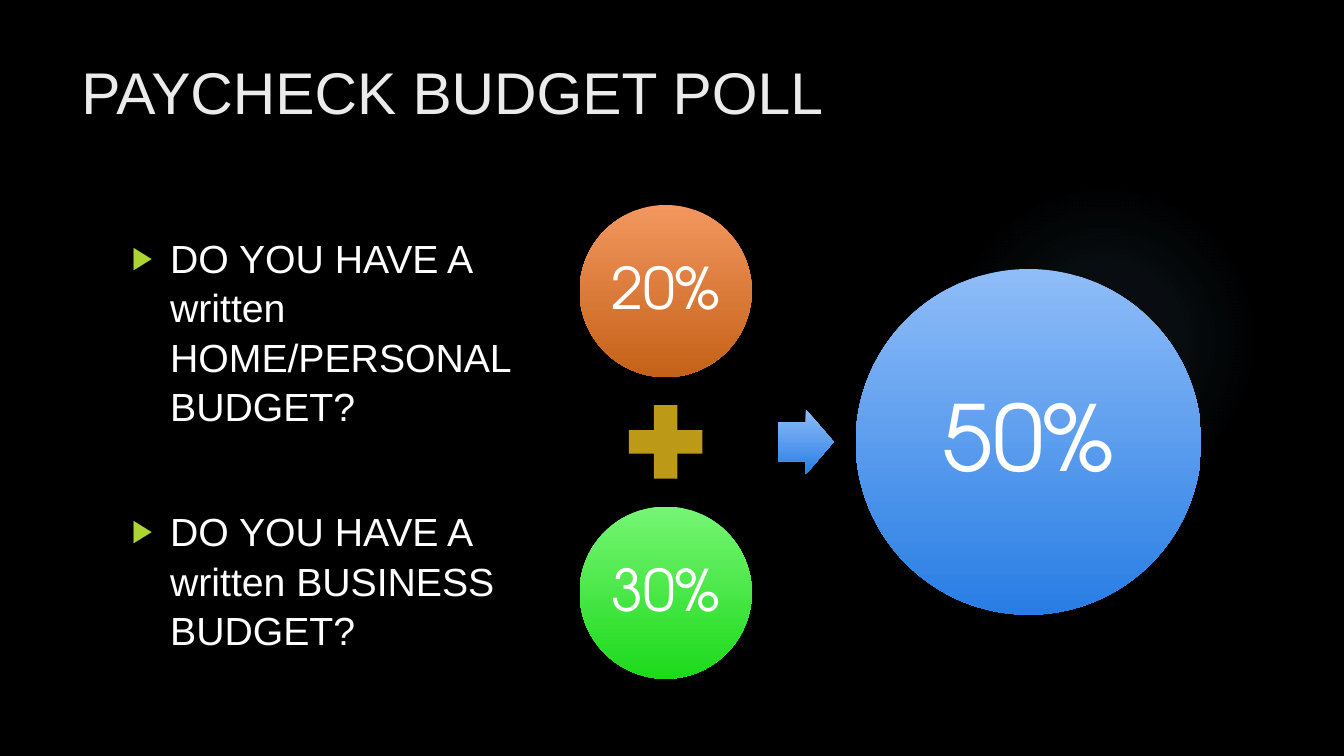
import pptx
import pptx.util
import pptx.dml.color
import pptx.enum.shapes
import pptx.enum.text
import pptx.oxml
import pptx.oxml.ns

Pt = pptx.util.Pt
Kind = pptx.enum.shapes.MSO_SHAPE
Align = pptx.enum.text.PP_ALIGN
Anchor = pptx.enum.text.MSO_ANCHOR

COLS, ROWS = 160, 90
SANS, ROUND = "Arial", "TeX Gyre Adventor"
WHITE, PALE, LIME, GOLD = "FFFFFF", "EBEBEB", "ACD433", "BC9A17"
ORANGE = ("F2975F", "C56118")
GREEN = ("76F574", "1DDA1B")
BLUE = ("8FBDF8", "287DE4")


def ink(code):
    return pptx.dml.color.RGBColor.from_string(code)


def parse(tag, attrs="", inner=""):
    """Make one DrawingML element."""
    space = pptx.oxml.ns.nsdecls("a")
    return pptx.oxml.parse_xml(f"<a:{tag} {space} {attrs}>{inner}</a:{tag}>")


class Deck:
    """Holds the style and the slide; lengths are grid cells."""

    def __init__(self):
        self.show = pptx.Presentation()
        self.show.slide_width = pptx.util.Inches(13.33)
        self.show.slide_height = pptx.util.Inches(7.5)
        self.cell = (self.show.slide_width / COLS, self.show.slide_height / ROWS)
        self.slide = self.show.slides.add_slide(self.show.slide_layouts[1])
        back = self.slide.background.fill
        back.solid()
        back.fore_color.rgb = ink("000000")

    def place(self, item, left, top, width, height):
        wide, high = self.cell
        item.left, item.width = round(left * wide), round(width * wide)
        item.top, item.height = round(top * high), round(height * high)

    def style(self, para, font, size, color):
        for run in para.runs:
            run.font.name = font
            run.font.size = Pt(size)
            run.font.color.rgb = ink(color)

    def holder(self, item, box):
        self.place(item, *box)
        frame = item.text_frame
        frame.word_wrap = True
        frame.auto_size = pptx.enum.text.MSO_AUTO_SIZE.NONE
        frame.vertical_anchor = Anchor.TOP
        return frame

    def title(self, text, box):
        frame = self.holder(self.slide.shapes.title, box)
        frame.text = text
        para = frame.paragraphs[0]
        para.alignment = Align.LEFT
        self.style(para, SANS, 42, PALE)

    def list(self, lines, box, gap):
        frame = self.holder(self.slide.placeholders[1], box)
        frame.text = "\n".join(lines)
        indent = pptx.util.Inches(0.38)
        for index, para in enumerate(frame.paragraphs):
            props = para._p.get_or_add_pPr()
            props.set("marL", str(indent))
            props.set("indent", str(-indent))
            props.append(parse("buClr", "", f'<a:srgbClr val="{LIME}"/>'))
            props.append(parse("buSzPct", 'val="80000"'))
            props.append(parse("buChar", 'char="▶"'))
            para.line_spacing = 1.05
            para.space_before = Pt(gap if index else 0)
            self.style(para, SANS, 28, WHITE)

    def shape(self, kind, mid, width, height):
        """Add a plain shape around its middle point."""
        item = self.slide.shapes.add_shape(kind, 0, 0, 0, 0)
        self.place(item, mid[0] - width / 2, mid[1] - height / 2, width, height)
        item.shadow.inherit = False
        item.line.fill.background()
        return item

    def shade(self, item, pair):
        """Fill from the first colour at the top to the second below."""
        item.fill.gradient()
        item.fill.gradient_angle = 270
        for stop, code in zip(item.fill.gradient_stops, pair):
            stop.color.rgb = ink(code)

    def disk(self, text, mid, size, pair, points):
        item = self.shape(Kind.OVAL, mid, size, size)
        self.shade(item, pair)
        frame = item.text_frame
        frame.word_wrap = False
        frame.vertical_anchor = Anchor.MIDDLE
        frame.text = text
        para = frame.paragraphs[0]
        para.alignment = Align.CENTER
        para.line_spacing = 0.9
        self.style(para, ROUND, points, WHITE)

    def plus(self, mid, size):
        item = self.shape(Kind.MATH_PLUS, mid, size, size)
        item.fill.solid()
        item.fill.fore_color.rgb = ink(GOLD)

    def arrow(self, mid, width, height):
        item = self.shape(Kind.RIGHT_ARROW, mid, width, height)
        item.adjustments[0] = 0.6
        item.adjustments[1] = 0.5
        self.shade(item, BLUE)

    def glow(self, mid, size):
        """Add a faint round light that fades outward."""
        item = self.shape(Kind.OVAL, mid, size, size)
        stops = "".join(
            f'<a:gs pos="{spot * 1000}"><a:srgbClr val="7AC4F0">'
            f'<a:alpha val="{alpha * 1000}"/></a:srgbClr></a:gs>'
            for spot, alpha in ((0, 7), (36, 6), (69, 0)))
        fade = parse("gradFill", "", f'<a:gsLst>{stops}</a:gsLst><a:path path="circle">'
                     '<a:fillToRect l="50000" t="50000" r="50000" b="50000"/></a:path>')
        item._element.spPr.find(pptx.oxml.ns.qn("a:prstGeom")).addnext(fade)


def main():
    deck = Deck()
    deck.glow((131.4, 40.4), 37)
    deck.title("PAYCHECK BUDGET POLL", (8.5, 6, 123.5, 18.4))
    deck.list(["DO YOU HAVE A written HOME/PERSONAL BUDGET?",
               "DO YOU HAVE A written BUSINESS BUDGET?"],
              (14.5, 27, 50, 55), gap=54)

    left, middle, step = 79.25, 52.6, 17.95
    deck.disk("20%", (left, middle - step), 20.5, ORANGE, 41)
    deck.plus((left, middle), 11.9)
    deck.disk("30%", (left, middle + step), 20.5, GREEN, 41)
    deck.arrow((95.95, middle), 6.6, 7.7)
    deck.disk("50%", (122.45, middle), 41.15, BLUE, 65)
    deck.show.save("out.pptx")


if __name__ == "__main__":
    main()
